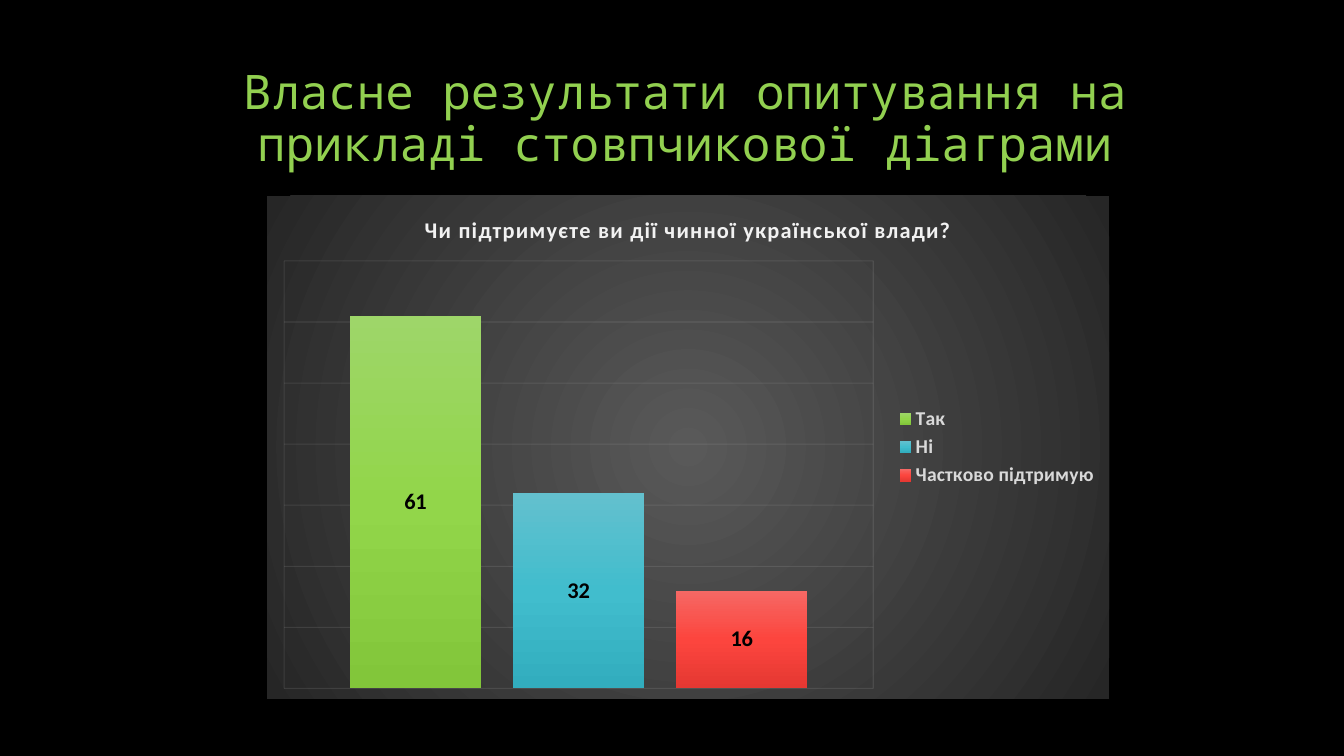
import dataclasses

import pptx
import pptx.chart.data
import pptx.dml.color
import pptx.enum.chart
import pptx.enum.text
import pptx.oxml
import pptx.oxml.ns
import pptx.util
from pptx.util import Inches

qn = pptx.oxml.ns.qn
NAMESPACES = pptx.oxml.ns.nsdecls("a", "c")


@dataclasses.dataclass(frozen=True)
class Theme:
    background: str = "000000"
    heading: str = "92D050"
    chart_title: str = "F2F2F2"
    chart_text: str = "FFFFFF"
    legend: str = "D9D9D9"
    grid: str = "F2F2F2"
    label: str = "000000"
    panel: tuple = ("595959", "262626")
    heading_font: str = "Noto Sans Mono"
    chart_font: str = "Calibri"
    heading_size: int = 34
    chart_title_size: int = 16
    label_size: int = 16
    legend_size: int = 14
    chart_size: int = 10


THEME = Theme()

# Answer, votes, gradient from top to bottom
ANSWERS = [
    ("Так", 61, ("9ED669", "92D64A", "82C63A")),
    ("Ні", 32, ("63C0CE", "41BDCD", "32ADBE")),
    ("Частково підтримую", 16, ("F66864", "FC453E", "E53832")),
]


def rgb(color):
    return pptx.dml.color.RGBColor.from_string(color)


def style_font(font, name, size, color, bold=False):
    font.name = name
    font.size = pptx.util.Pt(size)
    font.bold = bold
    font.color.rgb = rgb(color)


def gradient_fill(colors, direction):
    """Evenly spaced gradient stops; direction is the a:lin or a:path element."""
    stops = "".join(
        f'<a:gs pos="{100000 * index // (len(colors) - 1)}"><a:srgbClr val="{color}"/></a:gs>'
        for index, color in enumerate(colors))
    return pptx.oxml.parse_xml(
        f'<a:gradFill {NAMESPACES} rotWithShape="1"><a:gsLst>{stops}</a:gsLst>{direction}</a:gradFill>')


def style_axis(axis):
    axis.visible = False
    axis.has_major_gridlines = True
    line = axis.major_gridlines.format.line
    line.width = pptx.util.Pt(0.75)
    line.color.rgb = rgb(THEME.grid)
    color = axis.major_gridlines._xAx.find(".//" + qn("a:srgbClr"))
    color.append(pptx.oxml.parse_xml(f'<a:alpha {NAMESPACES} val="10000"/>'))


def add_heading(slide, left, top, width, height):
    frame = slide.shapes.add_textbox(left, top, width, height).text_frame
    frame.word_wrap = True
    frame.vertical_anchor = pptx.enum.text.MSO_ANCHOR.BOTTOM
    frame.text = "Власне результати опитування на прикладі стовпчикової діаграми"
    paragraph = frame.paragraphs[0]
    paragraph.alignment = pptx.enum.text.PP_ALIGN.CENTER
    paragraph.line_spacing = 0.9
    style_font(paragraph.runs[0].font, THEME.heading_font, THEME.heading_size, THEME.heading)


def style_panel(chart):
    # Radial background without a border
    panel = pptx.oxml.parse_xml(f"<c:spPr {NAMESPACES}><a:ln><a:noFill/></a:ln></c:spPr>")
    panel.insert(0, gradient_fill(
        THEME.panel,
        '<a:path path="circle"><a:fillToRect l="50000" t="50000" r="50000" b="50000"/></a:path>'))
    chart_space = chart._chartSpace
    chart_space.find(qn("c:chart")).addnext(panel)

    # Plot area as shares of the chart
    plot_area = chart_space.find(".//" + qn("c:plotArea"))
    for layout in plot_area.findall(qn("c:layout")):
        plot_area.remove(layout)
    shares = "".join(f'<c:{key} val="{value}"/>' for key, value in
                     (("x", 0.02), ("y", 0.13), ("w", 0.7), ("h", 0.85)))
    plot_area.insert(0, pptx.oxml.parse_xml(
        f'<c:layout {NAMESPACES}><c:manualLayout><c:layoutTarget val="inner"/>'
        f'<c:xMode val="edge"/><c:yMode val="edge"/>{shares}</c:manualLayout></c:layout>'))


def add_survey_chart(slide, left, top, width, height):
    data = pptx.chart.data.CategoryChartData()
    data.categories = ["1"]
    for answer, votes, _ in ANSWERS:
        data.add_series(answer, [votes])
    chart = slide.shapes.add_chart(
        pptx.enum.chart.XL_CHART_TYPE.COLUMN_CLUSTERED, left, top, width, height, data).chart
    style_font(chart.font, THEME.chart_font, THEME.chart_size, THEME.chart_text)
    style_panel(chart)

    # Title
    chart.has_title = True
    chart.chart_title.include_in_layout = False
    frame = chart.chart_title.text_frame
    frame.text = "Чи підтримуєте ви дії чинної української влади?"
    run = frame.paragraphs[0].runs[0]
    style_font(run.font, THEME.chart_font, THEME.chart_title_size, THEME.chart_title, True)
    run.font._element.set("spc", "100")

    # Legend
    chart.has_legend = True
    chart.legend.position = pptx.enum.chart.XL_LEGEND_POSITION.RIGHT
    chart.legend.include_in_layout = False
    style_font(chart.legend.font, THEME.chart_font, THEME.legend_size, THEME.legend, True)

    # Axes
    style_axis(chart.category_axis)
    style_axis(chart.value_axis)
    chart.value_axis.minimum_scale = 0
    chart.value_axis.maximum_scale = 70
    chart.value_axis.major_unit = 10

    # Columns and their values
    plot = chart.plots[0]
    plot.vary_by_categories = False
    plot.gap_width = 100
    plot.overlap = -24
    for series, (_, _, colors) in zip(plot.series, ANSWERS):
        series.format.line.fill.background()
        properties = series._element.find(qn("c:spPr"))
        properties.insert(0, gradient_fill(colors, '<a:lin ang="5400000" scaled="0"/>'))
        labels = series.data_labels
        labels.show_value = True
        labels.position = pptx.enum.chart.XL_LABEL_POSITION.CENTER
        style_font(labels.font, THEME.chart_font, THEME.label_size, THEME.label, True)


def main():
    presentation = pptx.Presentation()
    presentation.slide_width = Inches(13.33)
    presentation.slide_height = Inches(7.5)
    slide = presentation.slides.add_slide(presentation.slide_layouts[6])
    slide.background.fill.solid()
    slide.background.fill.fore_color.rgb = rgb(THEME.background)

    add_heading(slide, Inches(1.67), Inches(0.5), Inches(10.25), Inches(1.25))
    add_survey_chart(slide, Inches(2.65), Inches(1.94), Inches(8.35), Inches(4.99))
    presentation.save("out.pptx")


if __name__ == "__main__":
    main()
